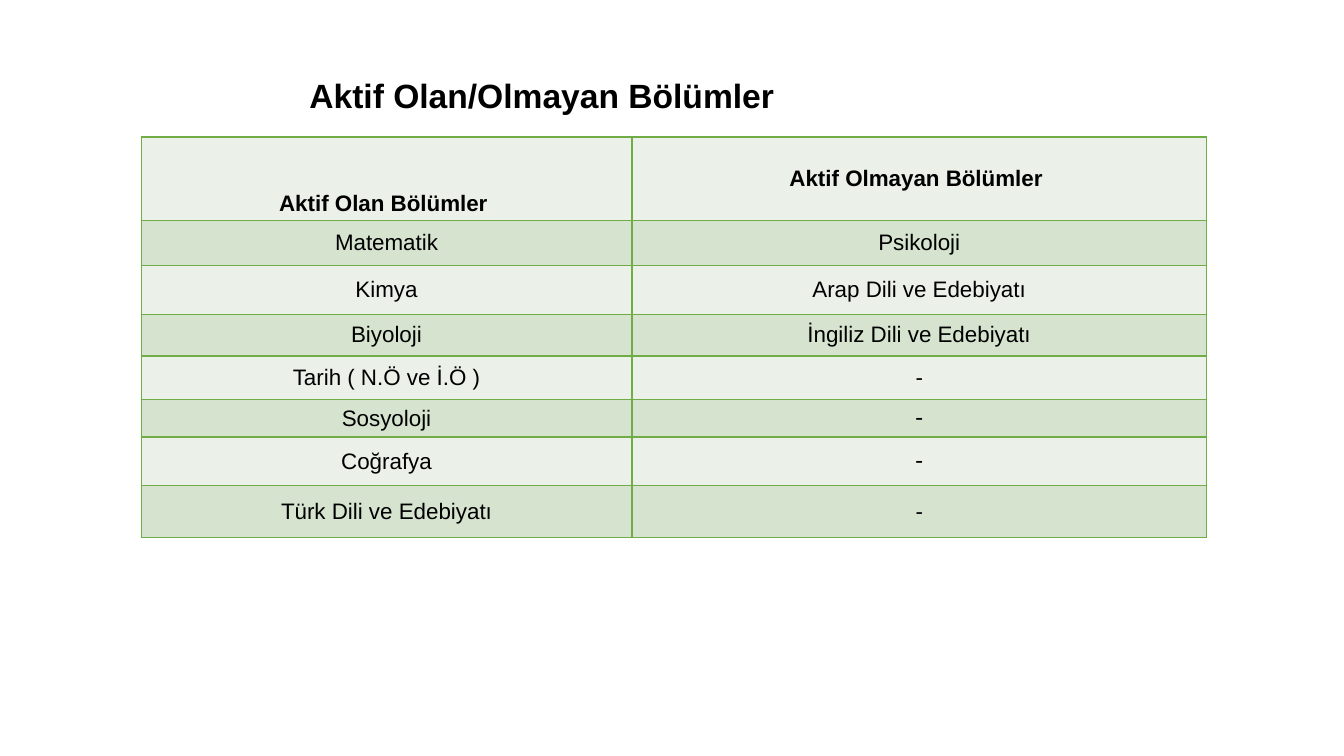
import pptx
import pptx.dml.color
import pptx.enum.text
import pptx.oxml
import pptx.oxml.ns
import pptx.util
from dataclasses import dataclass

Pt = pptx.util.Pt
RGBColor = pptx.dml.color.RGBColor
Align = pptx.enum.text.PP_ALIGN
Anchor = pptx.enum.text.MSO_ANCHOR


@dataclass(frozen=True)
class Theme:
    text: str = "000000"
    border: str = "70AD47"
    light_row: str = "EBF1E9"
    dark_row: str = "D5E3CF"
    font: str = "Arial"
    dash_font: str = "Calibri"
    title_size: int = 24
    cell_size: int = 16
    dash_size: int = 18


THEME = Theme()

TITLE = "Aktif Olan/Olmayan Bölümler"
DEPARTMENTS = [
    ("Aktif Olan Bölümler ", "Aktif Olmayan Bölümler "),
    ("Matematik", "Psikoloji"),
    ("Kimya", "Arap Dili ve Edebiyatı"),
    ("Biyoloji", "İngiliz Dili ve Edebiyatı"),
    ("Tarih ( N.Ö ve İ.Ö )", "-"),
    ("Sosyoloji", "-"),
    ("Coğrafya", "-"),
    ("Türk Dili ve Edebiyatı", "-"),
]
COLUMN_WIDTHS = [350.6, 410.4]
ROW_HEIGHTS = [59.8, 31.9, 35, 29.8, 31, 26.9, 34.6, 36.9]
LARGE_DASHES = {(5, 1), (6, 1)}


def format_paragraph(paragraph, size, font=THEME.font, bold=False):
    paragraph.alignment = Align.CENTER
    for run in paragraph.runs:
        run.font.name = font
        run.font.size = Pt(size)
        run.font.bold = bold
        run.font.color.rgb = RGBColor.from_string(THEME.text)


def add_borders(cell):
    """Draw a thin line on every side; lines must precede the cell fill."""
    properties = cell._tc.get_or_add_tcPr()
    for index, side in enumerate(("lnL", "lnR", "lnT", "lnB")):
        properties.insert(index, pptx.oxml.parse_xml(
            f'<a:{side} {pptx.oxml.ns.nsdecls("a")} w="{Pt(1)}">'
            f'<a:solidFill><a:srgbClr val="{THEME.border}"/></a:solidFill>'
            f'</a:{side}>'))


def add_title(slide, left, top, width, height):
    title = slide.shapes.title
    title.left, title.top, title.width, title.height = (
        Pt(left), Pt(top), Pt(width), Pt(height))
    frame = title.text_frame
    frame.text = TITLE
    frame.word_wrap = True
    frame.vertical_anchor = Anchor.TOP
    format_paragraph(frame.paragraphs[0], THEME.title_size, bold=True)


def fill_cell(cell, text, row, column):
    cell.margin_left = cell.margin_right = Pt(3.6)
    cell.margin_top = cell.margin_bottom = Pt(0)
    cell.vertical_anchor = Anchor.MIDDLE
    cell.fill.solid()
    cell.fill.fore_color.rgb = RGBColor.from_string(
        THEME.dark_row if row % 2 else THEME.light_row)
    add_borders(cell)
    cell.text_frame.text = text
    paragraph = cell.text_frame.paragraphs[0]
    if (row, column) in LARGE_DASHES:
        format_paragraph(paragraph, THEME.dash_size, THEME.dash_font)
    else:
        format_paragraph(paragraph, THEME.cell_size, bold=row == 0)


def add_department_table(slide, left, top):
    table = slide.shapes.add_table(
        len(DEPARTMENTS), len(COLUMN_WIDTHS), Pt(left), Pt(top),
        Pt(sum(COLUMN_WIDTHS)), Pt(sum(ROW_HEIGHTS))).table
    table.first_row = table.horz_banding = False
    for column, width in zip(table.columns, COLUMN_WIDTHS):
        column.width = Pt(width)
    for row, height in zip(table.rows, ROW_HEIGHTS):
        row.height = Pt(height)
    for row, names in enumerate(DEPARTMENTS):
        for column, name in enumerate(names):
            fill_cell(table.cell(row, column), name, row, column)
    # The first heading sits low in its cell
    table.cell(0, 0).text_frame.paragraphs[0].line_spacing = 3.0


def main():
    presentation = pptx.Presentation()
    presentation.slide_width, presentation.slide_height = Pt(960), Pt(540)
    slide = presentation.slides.add_slide(presentation.slide_layouts[5])
    add_title(slide, 128.9, 49.7, 516.2, 36)
    add_department_table(slide, 100.8, 97.9)
    presentation.save("out.pptx")


if __name__ == "__main__":
    main()
